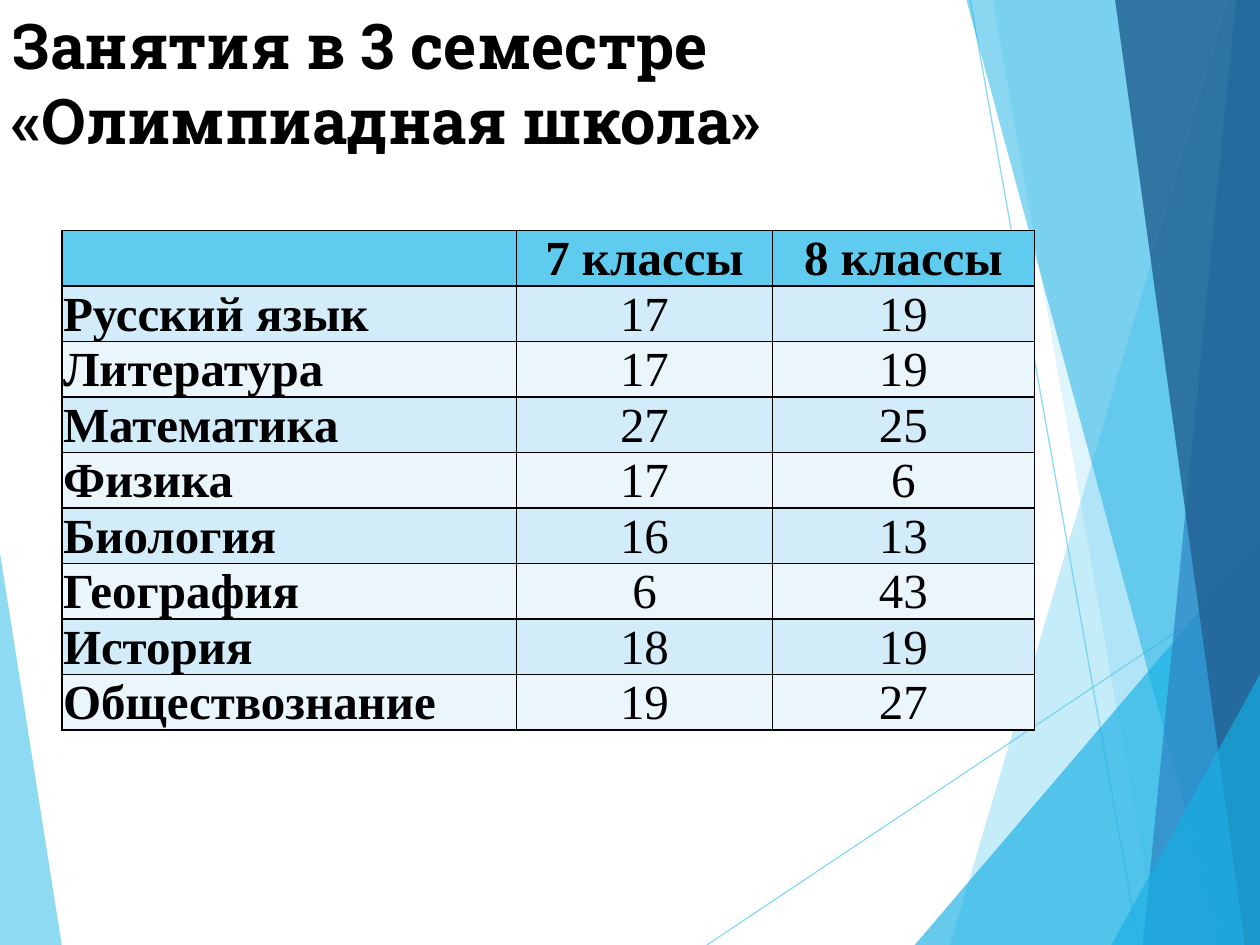
from lxml.etree import SubElement
from pptx import Presentation
from pptx.dml.color import RGBColor
from pptx.enum.shapes import MSO_CONNECTOR
from pptx.enum.text import MSO_ANCHOR, MSO_AUTO_SIZE, PP_ALIGN
from pptx.oxml.ns import qn
from pptx.util import Inches, Pt

SKY = RGBColor(0x5F, 0xCB, 0xEF)
CYAN = RGBColor(0x17, 0xB0, 0xE4)
BLUE = RGBColor(0x2E, 0x83, 0xC3)
NAVY = RGBColor(0x22, 0x62, 0x92)
BLACK = RGBColor(0, 0, 0)
BANDS = RGBColor(0xD2, 0xEC, 0xF9), RGBColor(0xEA, 0xF6, 0xFC)

WIDTH, HEIGHT = 10, 7.5
ROW_HEIGHT = 0.42
COLUMN_WIDTHS = 3.61, 2.03, 2.08


def set_opacity(shape, percent):
    for color in shape._element.xpath(".//a:srgbClr"):
        SubElement(color, qn("a:alpha")).set("val", str(percent * 1000))


def add_borders(cell):
    properties = cell._tc.get_or_add_tcPr()
    for side in ("lnL", "lnR", "lnT", "lnB"):
        line = SubElement(properties, qn(f"a:{side}"), w=str(Pt(1)))
        fill = SubElement(line, qn("a:solidFill"))
        SubElement(fill, qn("a:srgbClr"), val=str(BLACK))


presentation = Presentation()
presentation.slide_width, presentation.slide_height = Inches(WIDTH), Inches(HEIGHT)
slide = presentation.slides.add_slide(presentation.slide_layouts[5])
shapes = slide.shapes

# Background rays, back to front
rays = [
    ([(0, 4.39), (0.49, HEIGHT), (0, HEIGHT)], SKY, 70),
    ([(9.75, 0), (7.54, HEIGHT), (WIDTH, HEIGHT), (WIDTH, 0)], SKY, 36),
    ([(7.88, 0), (9.19, HEIGHT), (WIDTH, HEIGHT), (WIDTH, 0)], SKY, 20),
    ([(7.26, HEIGHT), (WIDTH, 4.29), (WIDTH, HEIGHT)], CYAN, 66),
    ([(7.67, 0), (9.7, HEIGHT), (WIDTH, HEIGHT), (WIDTH, 0)], CYAN, 50),
    ([(9.81, 0), (9.07, HEIGHT), (WIDTH, HEIGHT), (WIDTH, 0)], BLUE, 70),
    ([(8.85, 0), (9.88, HEIGHT), (WIDTH, HEIGHT), (WIDTH, 0)], NAVY, 82),
    ([(8.82, HEIGHT), (WIDTH, 5.35), (WIDTH, HEIGHT)], CYAN, 66),
]
thin_lines = [(5.61, HEIGHT, WIDTH, 4.57), (7.7, 0, 9.04, HEIGHT)]

for index, (points, color, opacity) in enumerate(rays):
    corners = [(Inches(x), Inches(y)) for x, y in points]
    builder = shapes.build_freeform(*corners[0])
    builder.add_line_segments(corners[1:])
    ray = builder.convert_to_shape()
    ray.shadow.inherit = False
    ray.fill.solid()
    ray.fill.fore_color.rgb = color
    ray.line.fill.background()
    set_opacity(ray, opacity)
    if index == 0:  # the thin lines lie above the left ray only
        for ends in thin_lines:
            line = shapes.add_connector(MSO_CONNECTOR.STRAIGHT, *map(Inches, ends))
            line.line.color.rgb = SKY
            line.line.width = Pt(0.75)
            set_opacity(line, 70)
            SubElement(line._element.spPr, qn("a:effectLst"))

# Title, brought in front of the rays
title = shapes.title
shapes._spTree.append(title._element)
title.left, title.top = 0, 0
title.width, title.height = Inches(9.4), Inches(0.74)
frame = title.text_frame
frame.text = "Занятия в 3 семестре\v«Олимпиадная школа»"
frame.auto_size = MSO_AUTO_SIZE.NONE
frame.word_wrap = True
frame.vertical_anchor = MSO_ANCHOR.TOP
paragraph = frame.paragraphs[0]
paragraph.alignment = PP_ALIGN.LEFT
for run in paragraph.runs:
    run.font.name, run.font.size = "Roboto Slab", Pt(36)
    run.font.bold = True
    run.font.color.rgb = BLACK

# Table of lessons
rows = [
    ("", "7 классы", "8 классы"),
    ("Русский язык", 17, 19),
    ("Литература", 17, 19),
    ("Математика", 27, 25),
    ("Физика", 17, 6),
    ("Биология", 16, 13),
    ("География", 6, 43),
    ("История", 18, 19),
    ("Обществознание", 19, 27),
]
table = shapes.add_table(
    len(rows), len(COLUMN_WIDTHS), Inches(0.49), Inches(1.83),
    Inches(sum(COLUMN_WIDTHS)), Inches(ROW_HEIGHT * len(rows)),
).table
for column, width in zip(table.columns, COLUMN_WIDTHS):
    column.width = Inches(width)

for row_index, values in enumerate(rows):
    table.rows[row_index].height = Inches(ROW_HEIGHT)
    for column_index, value in enumerate(values):
        cell = table.cell(row_index, column_index)
        add_borders(cell)
        cell.fill.solid()
        cell.fill.fore_color.rgb = BANDS[(row_index - 1) % 2] if row_index else SKY
        cell.margin_left = cell.margin_right = cell.margin_top = Inches(0.01)
        cell.margin_bottom = 0
        cell.vertical_anchor = MSO_ANCHOR.BOTTOM
        cell.text = str(value)
        paragraph = cell.text_frame.paragraphs[0]
        paragraph.alignment = PP_ALIGN.CENTER if column_index else PP_ALIGN.LEFT
        for run in paragraph.runs:
            run.font.name, run.font.size = "Times New Roman", Pt(28)
            run.font.bold = row_index == 0 or column_index == 0
            run.font.color.rgb = BLACK

presentation.save("out.pptx")
